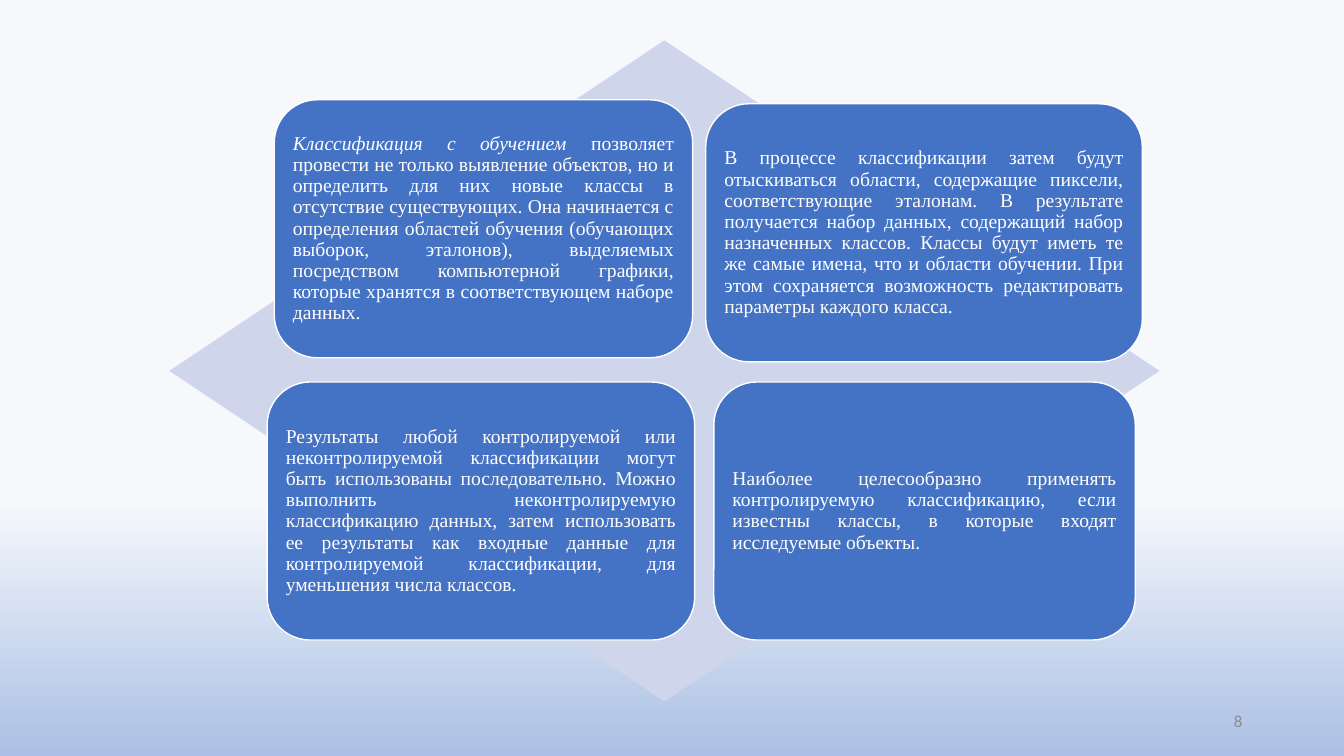
import pptx
import pptx.util
import pptx.dml.color
import pptx.enum.shapes
import pptx.enum.text

Inches, Pt = pptx.util.Inches, pptx.util.Pt
RGBColor = pptx.dml.color.RGBColor
MSO_SHAPE = pptx.enum.shapes.MSO_SHAPE
PP_ALIGN = pptx.enum.text.PP_ALIGN
MSO_ANCHOR = pptx.enum.text.MSO_ANCHOR

WHITE = RGBColor(0xFF, 0xFF, 0xFF)
BLUE = RGBColor(0x44, 0x72, 0xC4)
PALE = RGBColor(0xCF, 0xD5, 0xEA)
GREY = RGBColor(0x8C, 0x8C, 0x8C)
SKY_TOP = RGBColor(0xF6, 0xF8, 0xFC)
SKY_BOTTOM = RGBColor(0xAB, 0xC0, 0xE4)

CARD_HEIGHT = 2.56
CARDS = [
    (1.04, 0.59, 4.15, [
        ("Классификация с обучением ", True),
        ("позволяет провести не только выявление объектов, но и определить для них "
         "новые классы в отсутствие существующих. Она начинается с определения областей "
         "обучения (обучающих выборок, эталонов), выделяемых посредством компьютерной "
         "графики, которые хранятся в соответствующем наборе данных.", False)]),
    (5.32, 0.63, 4.33, [
        ("В процессе классификации затем будут отыскиваться области, содержащие пиксели, "
         "соответствующие эталонам. В результате получается набор данных, содержащий набор "
         "назначенных классов. Классы будут иметь те же самые имена, что и области обучении. "
         "При этом сохраняется возможность редактировать параметры каждого класса.", False)]),
    (0.97, 3.39, 4.24, [
        ("Результаты любой контролируемой или неконтролируемой классификации могут быть "
         "использованы последовательно. Можно выполнить неконтролируемую классификацию "
         "данных, затем использовать ее результаты как входные данные для контролируемой "
         "классификации, для уменьшения числа классов.", False)]),
    (5.4, 3.39, 4.18, [
        ("Наиболее целесообразно применять контролируемую классификацию, если известны "
         "классы, в которые входят исследуемые объекты.", False)]),
]


def paint_background(s):
    """Fill the background with a gradient that deepens in the lower third."""
    fill = s.background.fill
    fill.gradient()
    fill.gradient_angle = 270
    stops = [(0.66, SKY_TOP), (1, SKY_BOTTOM)]
    for stop, (position, color) in zip(fill.gradient_stops, stops):
        stop.position = position
        stop.color.rgb = color


def add_filled(s, kind, box, color):
    """Add a flat preset shape without outline or shadow."""
    sp = s.shapes.add_shape(kind, *(Inches(v) for v in box))
    sp.shadow.inherit = False
    sp.fill.solid()
    sp.fill.fore_color.rgb = color
    sp.line.fill.background()
    return sp


def add_card(s, box, parts):
    """Add a rounded card with justified text."""
    sp = add_filled(s, MSO_SHAPE.ROUNDED_RECTANGLE, box, BLUE)
    sp.line.color.rgb = WHITE
    sp.line.width = Pt(1)
    tf = sp.text_frame
    tf.word_wrap = True
    tf.vertical_anchor = MSO_ANCHOR.MIDDLE
    tf.margin_left = tf.margin_right = tf.margin_top = tf.margin_bottom = Inches(0.06)
    p = tf.paragraphs[0]
    p.alignment = PP_ALIGN.JUSTIFY
    p.line_spacing = 0.9
    for text, italic in parts:
        r = p.add_run()
        r.text = text
        r.font.name = "Times New Roman"
        r.font.size = Pt(14)
        r.font.italic = italic
        r.font.color.rgb = WHITE


def add_matrix(s, box):
    """Place the diamond in the box and the four cards over it."""
    left, top = box[:2]
    add_filled(s, MSO_SHAPE.DIAMOND, box, PALE)
    for dx, dy, width, parts in CARDS:
        add_card(s, (left + dx, top + dy, width, CARD_HEIGHT), parts)


def add_page_number(s, box, number):
    """Add the right-aligned page number."""
    tf = s.shapes.add_textbox(*(Inches(v) for v in box)).text_frame
    tf.word_wrap = True
    tf.vertical_anchor = MSO_ANCHOR.MIDDLE
    p = tf.paragraphs[0]
    p.text = number
    p.alignment = PP_ALIGN.RIGHT
    font = p.runs[0].font
    font.name = "Calibri"
    font.size = Pt(12)
    font.color.rgb = GREY


def main():
    """Build and save the slide."""
    prs = pptx.Presentation()
    prs.slide_width, prs.slide_height = Inches(13.33), Inches(7.5)
    s = prs.slides.add_slide(prs.slide_layouts[6])
    paint_background(s)
    add_matrix(s, (1.68, 0.4, 9.82, 6.56))
    add_page_number(s, (9.42, 6.95, 3, 0.4), "8")
    prs.save("out.pptx")


if __name__ == "__main__":
    main()
